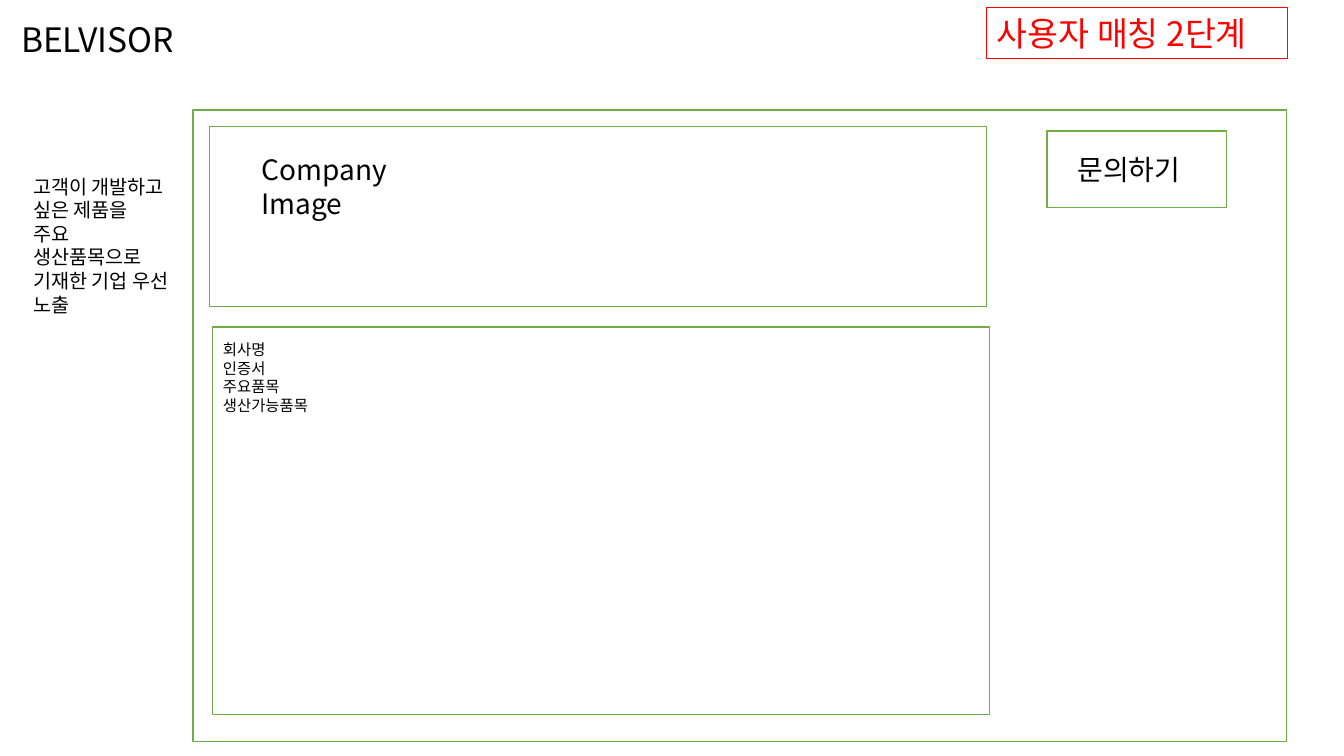
from lxml import etree
from pptx import Presentation
from pptx.dml.color import RGBColor
from pptx.enum import shapes, text
from pptx.oxml import ns
from pptx.util import Pt

BLACK = RGBColor(0x00, 0x00, 0x00)
WHITE = RGBColor(0xFF, 0xFF, 0xFF)
RED = RGBColor(0xFF, 0x00, 0x00)
GREEN = RGBColor(0x70, 0xAD, 0x47)
FONT = "Noto Sans CJK KR"


def place(shape, left, top, width, height):
    shape.left, shape.top = Pt(left), Pt(top)
    shape.width, shape.height = Pt(width), Pt(height)


def write(shape, *lines, size, color=BLACK, wrap=True):
    frame = shape.text_frame
    frame.text = "\n".join(lines)
    frame.word_wrap = wrap
    frame.auto_size = text.MSO_AUTO_SIZE.NONE
    frame.vertical_anchor = text.MSO_ANCHOR.TOP
    for paragraph in frame.paragraphs:
        paragraph.alignment = text.PP_ALIGN.LEFT
        paragraph.space_before = Pt(0)
        for run in paragraph.runs:
            run.font.size = Pt(size)
            run.font.name = FONT
            run.font.color.rgb = color
            east_asian = etree.SubElement(run.font._element, ns.qn("a:ea"))
            east_asian.set("typeface", FONT)


def add_text(slide, box, *lines, **formatting):
    shape = slide.shapes.add_textbox(*map(Pt, box))
    write(shape, *lines, **formatting)


def add_frame(slide, box, color=GREEN, weight=1, filled=True):
    frame = slide.shapes.add_shape(shapes.MSO_SHAPE.RECTANGLE, *map(Pt, box))
    frame.shadow.inherit = False
    frame.line.color.rgb = color
    frame.line.width = Pt(weight)
    if filled:
        frame.fill.solid()
        frame.fill.fore_color.rgb = WHITE
    else:
        frame.fill.background()
    return frame


def add_header(slide, left, top, width):
    place(slide.shapes.title, left, top + 4.3, 150, 36)
    write(slide.shapes.title, "BELVISOR", size=24, wrap=False)
    step = add_frame(slide, (left + width - 214.6, top, 214.6, 36.3), RED, 0.75, filled=False)
    write(step, "사용자 매칭 2단계", size=24, color=RED, wrap=False)


def add_company_image(slide, left, top, width, height):
    add_frame(slide, (left, top, width, height))
    add_text(slide, (left + 30, top + 15, 120, 56), "Company Image", size=20)


def add_company_details(slide, left, top, width, height):
    add_frame(slide, (left, top, width, height))
    details = slide.placeholders[1]
    place(details, left, top + 6, 526, 60.5)
    write(details, "회사명", "인증서", "주요품목", "생산가능품목", size=11)
    for paragraph in details.text_frame.paragraphs:
        properties = paragraph._p.get_or_add_pPr()
        properties.set("marL", "0")
        properties.set("indent", "0")
        etree.SubElement(properties, ns.qn("a:buNone"))
    slide.shapes._spTree.append(details._element)


def add_inquiry_button(slide, left, top, width, height):
    add_frame(slide, (left, top, width, height))
    add_text(slide, (left + 14.4, top + 12, 95, 31.7), "문의하기", size=20, wrap=False)


def add_company_panel(slide, left, top, width, height):
    add_frame(slide, (left, top, width, height))
    add_company_image(slide, left + 12, top + 12, 555, 128.3)
    add_company_details(slide, left + 14.2, top + 155, 555, 277)
    add_inquiry_button(slide, left + 610.2, top + 15, 128.3, 55)


def main():
    presentation = Presentation()
    presentation.slide_width, presentation.slide_height = Pt(960), Pt(540)
    slide = presentation.slides.add_slide(presentation.slide_layouts[1])
    add_header(slide, 7.9, 5.5, 911.6)
    add_text(slide, (16.5, 121.3, 118.8, 108.7), "고객이 개발하고 싶은 제품을",
             "주요 생산품목으로 기재한 기업 우선 노출", size=14)
    add_company_panel(slide, 137.8, 78.5, 781.4, 451.4)
    presentation.save("out.pptx")


if __name__ == "__main__":
    main()
